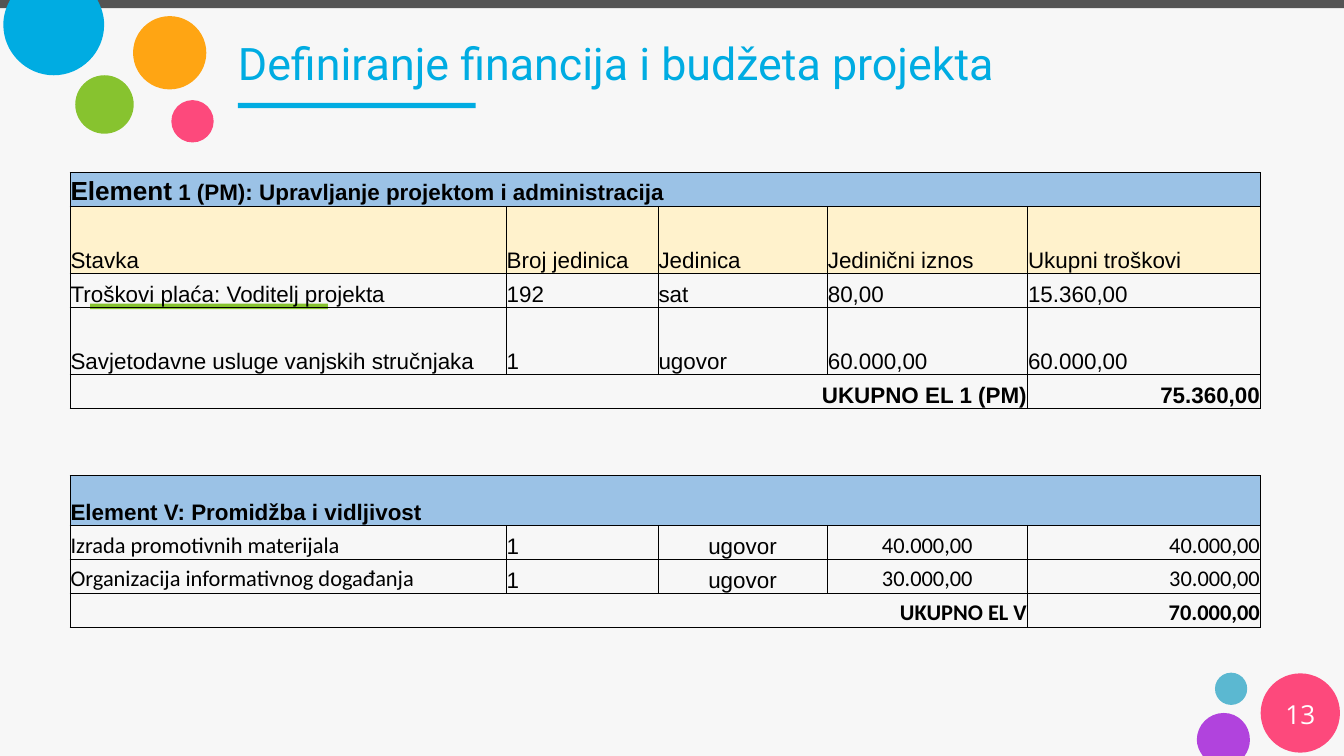
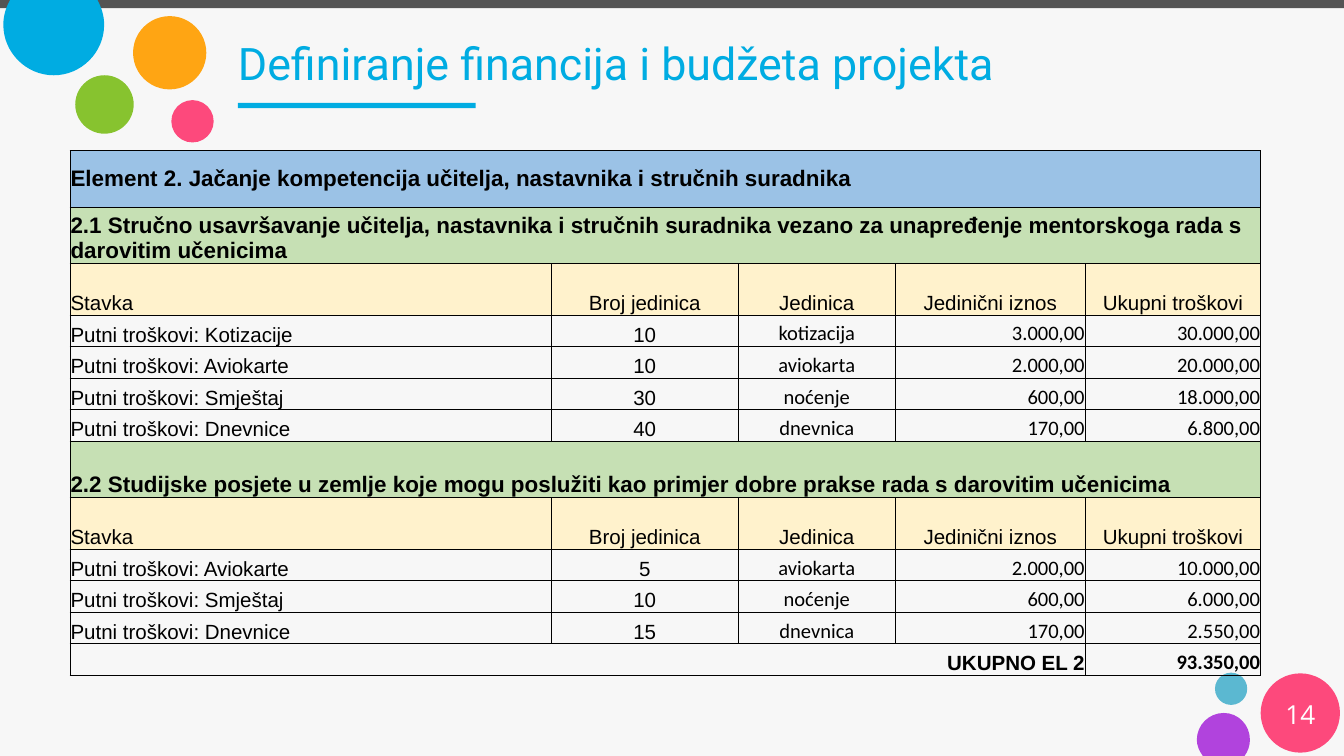
import dataclasses

import lxml.etree
import pptx
import pptx.dml.color
import pptx.enum.shapes
import pptx.enum.text
import pptx.oxml.ns
import pptx.util

Inches = pptx.util.Inches
Pt = pptx.util.Pt
RGB = pptx.dml.color.RGBColor.from_string
qn = pptx.oxml.ns.qn
SHAPE = pptx.enum.shapes.MSO_SHAPE
ALIGN = pptx.enum.text.PP_ALIGN
ANCHOR = pptx.enum.text.MSO_ANCHOR


@dataclasses.dataclass(frozen=True)
class Theme:
    background: str = "F7F7F7"
    top_band: str = "545454"
    blue: str = "00ACE2"
    pink: str = "FD497C"
    green: str = "87C32F"
    orange: str = "FFA513"
    teal: str = "5BB8D1"
    purple: str = "B143DD"
    white: str = "FFFFFF"
    ink: str = "000000"
    element_fill: str = "9BC2E6"
    activity_fill: str = "C6E0B4"
    header_fill: str = "FFF2CC"
    title_font: str = "Roboto"
    number_font: str = "Open Sans"
    title_size: int = 48
    number_size: int = 28
    lead_size: int = 28
    table_size: int = 24
    compact_size: int = 22
    border: float = 0.5


theme = Theme()


@dataclasses.dataclass(frozen=True)
class RowStyle:
    fill: str = ""
    size: int = theme.table_size
    bold: bool = False
    aligns: str = "lllll"
    fonts: str = "AAAAA"
    anchor: object = ANCHOR.BOTTOM
    edges: str = "LRTB"


fonts = {"A": "Arial", "C": "Calibri"}
alignments = {"l": ALIGN.LEFT, "c": ALIGN.CENTER, "r": ALIGN.RIGHT}
small = theme.compact_size
row_styles = {
    "element": RowStyle(theme.element_fill, bold=True),
    "element middle": RowStyle(theme.element_fill, bold=True, anchor=ANCHOR.MIDDLE),
    "activity": RowStyle(theme.activity_fill, bold=True),
    "header": RowStyle(theme.header_fill),
    "header small": RowStyle(theme.header_fill, small, aligns="lcccc"),
    "item": RowStyle(),
    "item mixed": RowStyle(aligns="llccr", fonts="CAACC"),
    "item small": RowStyle(size=small, aligns="lccrr", fonts="AACCC"),
    "total": RowStyle(bold=True, aligns="rr"),
    "total mixed": RowStyle(bold=True, aligns="rr", fonts="CC"),
    "total small": RowStyle(size=small, bold=True, aligns="rr", fonts="AC"),
    "gap top": RowStyle(edges="T"),
    "gap bottom": RowStyle(edges="B"),
}

heading = "Definiranje financija i budžeta projekta"
columns = ("Stavka", "Broj jedinica", "Jedinica", "Jedinični iznos", "Ukupni troškovi")
blank = ("",) * 5
pages = [
    dict(
        number="13",
        top=2.57,
        height=6.76,
        widths=(6.49, 0.67, 1.59, 1.2, 1.32, 1.01, 1.97, 3.47),
        spans=(1, 2, 2, 2, 1),
        rows=[
            (0.5, "element", ([("Element", theme.lead_size),
                               (" 1 (PM): Upravljanje projektom i administracija", theme.table_size)],)),
            (0.99, "header", columns),
            (0.5, "item", ("Troškovi plaća: Voditelj projekta", "192", "sat", "80,00", "15.360,00")),
            (0.99, "item", ("Savjetodavne usluge vanjskih stručnjaka", "1", "ugovor", "60.000,00", "60.000,00")),
            (0.5, "total", ("UKUPNO EL 1 (PM)", "75.360,00")),
            (0.5, "gap top", blank),
            (0.5, "gap bottom", blank),
            (0.74, "element", ("Element V: Promidžba i vidljivost",)),
            (0.5, "item mixed", ("Izrada promotivnih materijala", "1", "ugovor", "40.000,00", "40.000,00")),
            (0.5, "item mixed", ("Organizacija informativnog događanja", "1", "ugovor", "30.000,00", "30.000,00")),
            (0.5, "total mixed", ("UKUPNO EL V", "70.000,00")),
        ],
    ),
    dict(
        number="14",
        top=2.24,
        height=7.81,
        widths=(7.16, 2.79, 2.33, 2.83, 2.61),
        spans=(1, 1, 1, 1, 1),
        rows=[
            (0.84, "element middle", ("Element 2. Jačanje kompetencija učitelja, nastavnika i stručnih suradnika",)),
            (0.84, "activity", ("2.1 Stručno usavršavanje učitelja, nastavnika i stručnih suradnika "
                                "vezano za unapređenje mentorskoga rada s darovitim učenicima",)),
            (0.77, "header small", columns),
            (0.47, "item small", ("Putni troškovi: Kotizacije", "10", "kotizacija", "3.000,00", "30.000,00")),
            (0.47, "item small", ("Putni troškovi: Aviokarte", "10", "aviokarta", "2.000,00", "20.000,00")),
            (0.47, "item small", ("Putni troškovi: Smještaj", "30", "noćenje", "600,00", "18.000,00")),
            (0.47, "item small", ("Putni troškovi: Dnevnice", "40", "dnevnica", "170,00", "6.800,00")),
            (0.84, "activity", ("2.2 Studijske posjete u zemlje koje mogu poslužiti kao primjer "
                                "dobre prakse rada s darovitim učenicima",)),
            (0.77, "header small", columns),
            (0.47, "item small", ("Putni troškovi: Aviokarte", "5", "aviokarta", "2.000,00", "10.000,00")),
            (0.47, "item small", ("Putni troškovi: Smještaj", "10", "noćenje", "600,00", "6.000,00")),
            (0.47, "item small", ("Putni troškovi: Dnevnice", "15", "dnevnica", "170,00", "2.550,00")),
            (0.47, "total small", ("UKUPNO EL 2", "93.350,00")),
        ],
    ),
]


def add_run(paragraph, text, font, size, color, bold=False):
    run = paragraph.add_run()
    run.text = text
    run.font.name = font
    run.font.size = Pt(size)
    run.font.bold = bold
    run.font.color.rgb = RGB(color)


def draw_borders(cell, edges):
    properties = cell._tc.get_or_add_tcPr()
    for edge in "LRTB":
        line = lxml.etree.SubElement(properties, qn("a:ln" + edge), w=str(Pt(theme.border)))
        if edge in edges:
            fill = lxml.etree.SubElement(line, qn("a:solidFill"))
            lxml.etree.SubElement(fill, qn("a:srgbClr"), val=theme.ink)
        else:
            lxml.etree.SubElement(line, qn("a:noFill"))


deck = pptx.Presentation()
deck.slide_width = Inches(20)
deck.slide_height = Inches(11.25)
background = deck.slide_master.background.fill
background.solid()
background.fore_color.rgb = RGB(theme.background)

layout = deck.slide_layouts[5]
for placeholder in list(layout.placeholders):
    if placeholder.placeholder_format.type != pptx.enum.shapes.PP_PLACEHOLDER.TITLE:
        layout.shapes.element.remove(placeholder.element)

slides = [deck.slides.add_slide(layout) for page in pages]
canvas = slides[0].shapes
decorations = []
for kind, left, top, width, height, color in [
    (SHAPE.RECTANGLE, 0, 0, 20, 0.12, theme.top_band),
    (SHAPE.OVAL, 2.55, 1.49, 0.63, 0.63, theme.pink),
    (SHAPE.OVAL, 1.12, 1.12, 0.87, 0.87, theme.green),
    (SHAPE.OVAL, 1.98, 0.24, 1.09, 1.09, theme.orange),
    (SHAPE.OVAL, 18.08, 10.01, 0.48, 0.48, theme.teal),
    (SHAPE.OVAL, 18.76, 10.02, 1.18, 1.18, theme.pink),
    (SHAPE.RECTANGLE, 1.34, 4.52, 3.54, 0.08, theme.green),
    (SHAPE.RECTANGLE, 3.54, 1.53, 3.54, 0.08, theme.blue),
]:
    shape = canvas.add_shape(kind, Inches(left), Inches(top), Inches(width), Inches(height))
    decorations.append((shape, color))

for color, points in [
    (theme.blue, [(0.15, 0), (1.45, 0),
                  (1.51, 0.11), (1.55, 0.23), (1.55, 0.37),
                  (1.55, 0.78), (1.21, 1.12), (0.8, 1.12),
                  (0.39, 1.12), (0.05, 0.78), (0.05, 0.37),
                  (0.05, 0.23), (0.09, 0.11), (0.15, 0)]),
    (theme.purple, [(18.52, 11.25), (17.9, 11.25),
                    (17.85, 11.18), (17.81, 11.1), (17.81, 11.01),
                    (17.81, 10.79), (17.99, 10.61), (18.21, 10.61),
                    (18.43, 10.61), (18.6, 10.79), (18.6, 11.01),
                    (18.6, 11.1), (18.57, 11.18), (18.52, 11.25)]),
]:
    points = [(Inches(x), Inches(y)) for x, y in points]
    outline = canvas.build_freeform(*points[0])
    outline.add_line_segments(points[1:], close=True)
    cut_circle = outline.convert_to_shape()
    segments = list(cut_circle.element.iter(qn("a:lnTo")))[1:]
    for first in range(0, len(segments), 3):
        curve = lxml.etree.Element(qn("a:cubicBezTo"))
        segments[first].addprevious(curve)
        for segment in segments[first:first + 3]:
            curve.append(segment[0])
            segment.getparent().remove(segment)
    decorations.append((cut_circle, color))

for shape, color in decorations:
    shape.shadow.inherit = False
    shape.fill.solid()
    shape.fill.fore_color.rgb = RGB(color)
    shape.line.fill.background()
    layout.shapes.element.append(shape.element)

for slide, page in zip(slides, pages):
    title = slide.shapes.title
    title.left, title.top, title.width, title.height = map(Inches, (3.36, 0.27, 15.69, 1.32))
    number = slide.shapes.add_textbox(Inches(18.76), Inches(10.32), Inches(1.18), Inches(0.6))
    for box, text, font, size, color, alignment in [
        (title, heading, theme.title_font, theme.title_size, theme.blue, ALIGN.LEFT),
        (number, page["number"], theme.number_font, theme.number_size, theme.white, ALIGN.CENTER),
    ]:
        frame = box.text_frame
        frame.word_wrap = True
        frame.auto_size = pptx.enum.text.MSO_AUTO_SIZE.NONE
        frame.vertical_anchor = ANCHOR.MIDDLE
        frame.margin_left = frame.margin_right = Inches(0.18)
        frame.margin_top = frame.margin_bottom = Inches(0.09)
        frame.paragraphs[0].alignment = alignment
        add_run(frame.paragraphs[0], text, font, size, color)

    widths, rows = page["widths"], page["rows"]
    count = len(widths)
    stretch = page["height"] / sum(row[0] for row in rows)
    budget = slide.shapes.add_table(
        len(rows), count, Inches(1.04), Inches(page["top"]),
        Inches(sum(widths)), Inches(page["height"]),
    ).table
    budget.first_row = budget.horz_banding = False
    for column, width in zip(budget.columns, widths):
        column.width = Inches(width)

    spans_by_cells = {1: (count,), 2: (count - 1, 1), 5: page["spans"]}
    for row_index, (height, style_name, texts) in enumerate(rows):
        budget.rows[row_index].height = Inches(height * stretch)
        style = row_styles[style_name]
        spans = (2, 2, 2, 1, 1) if texts == blank else spans_by_cells[len(texts)]
        start = 0
        for text, span, align, font in zip(texts, spans, style.aligns, style.fonts):
            for column_index in range(start, start + span):
                cell = budget.cell(row_index, column_index)
                draw_borders(cell, style.edges)
                if style.fill:
                    cell.fill.solid()
                    cell.fill.fore_color.rgb = RGB(style.fill)
                else:
                    cell.fill.background()
            cell = budget.cell(row_index, start)
            if span > 1:
                cell.merge(budget.cell(row_index, start + span - 1))
            start += span
            cell.vertical_anchor = style.anchor
            cell.margin_left = cell.margin_right = cell.margin_top = Inches(0.01)
            cell.margin_bottom = 0
            paragraph = cell.text_frame.paragraphs[0]
            paragraph.alignment = alignments[align]
            runs = text if isinstance(text, list) else [(text, style.size)]
            for words, size in runs:
                if words:
                    add_run(paragraph, words, fonts[font], size, theme.ink, style.bold)

deck.save("out.pptx")
